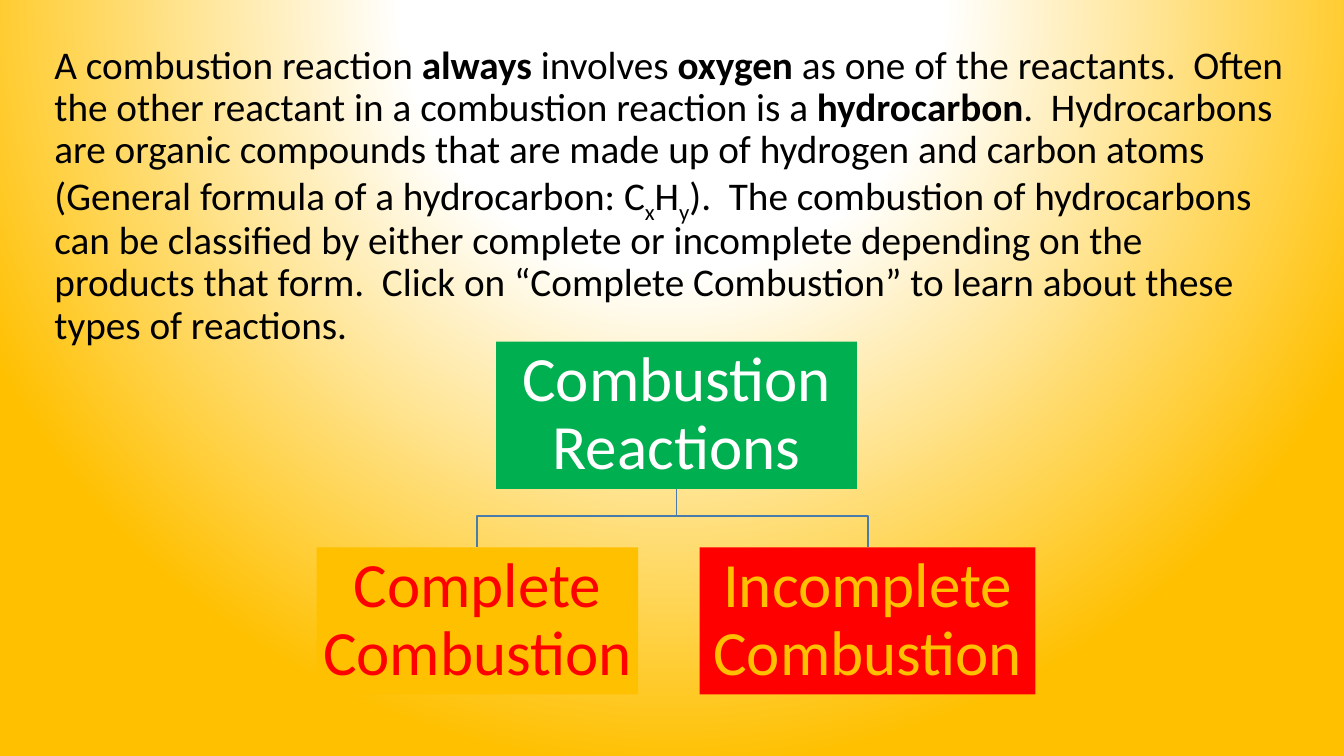
import pptx
import pptx.dml.color
import pptx.enum.shapes
import pptx.enum.text
import pptx.oxml
import pptx.util
from dataclasses import dataclass

Inches = pptx.util.Inches


@dataclass(frozen=True)
class Theme:
    font: str = "Calibri"
    body_size: int = 28
    box_size: int = 45
    black: str = "000000"
    white: str = "FFFFFF"
    green: str = "00B050"
    gold: str = "FFC000"
    red: str = "FF0000"
    line: str = "497CAB"


theme = Theme()


def rgb(value):
    return pptx.dml.color.RGBColor.from_string(value)


def add_run(p, text, size, color, bold=False, baseline=None):
    r = p.add_run()
    r.text = text
    r.font.name = theme.font
    r.font.size = pptx.util.Pt(size)
    r.font.bold = bold
    r.font.color.rgb = rgb(color)
    if baseline is not None:
        r.font._element.set("baseline", str(baseline * 1000))


prs = pptx.Presentation()
prs.slide_width = Inches(13.33)
prs.slide_height = Inches(7.5)
s = prs.slides.add_slide(prs.slide_layouts[1])
title = s.shapes.title.element
title.getparent().remove(title)

# Background: circular glow from the top centre
s.background.fill.solid()
solid = s.element.xpath("p:cSld/p:bg/p:bgPr/a:solidFill")[0]
stops = [(0, theme.white), (35, theme.white), (100, theme.gold)]
stop_xml = "".join(
    f'<a:gs pos="{pos * 1000}"><a:srgbClr val="{color}"/></a:gs>' for pos, color in stops
)
glow = pptx.oxml.parse_xml(
    '<a:gradFill xmlns:a="http://schemas.openxmlformats.org/drawingml/2006/main" rotWithShape="1">'
    f"<a:gsLst>{stop_xml}</a:gsLst>"
    '<a:path path="circle"><a:fillToRect l="50000" t="-80000" r="50000" b="180000"/></a:path>'
    "</a:gradFill>"
)
solid.getparent().replace(solid, glow)

# Explanation
body = s.placeholders[1]
body.left, body.top = Inches(0.44), Inches(0.4)
body.width, body.height = Inches(12.47), Inches(4.76)
tf = body.text_frame
tf.word_wrap = True
tf.auto_size = pptx.enum.text.MSO_AUTO_SIZE.NONE
p = tf.paragraphs[0]
p.line_spacing = 0.9
p.space_before = pptx.util.Pt(10)
pPr = p._p.get_or_add_pPr()
pPr.set("marL", "0")
pPr.set("indent", "0")
pPr.append(pptx.oxml.parse_xml(
    '<a:buNone xmlns:a="http://schemas.openxmlformats.org/drawingml/2006/main"/>'
))
explanation = [
    ("A combustion reaction ", {}),
    ("always", {"bold": True}),
    (" involves ", {}),
    ("oxygen", {"bold": True}),
    (" as one of the reactants.  Often the other reactant in a combustion reaction is a ", {}),
    ("hydrocarbon", {"bold": True}),
    (".  Hydrocarbons are organic compounds that are made up of hydrogen and carbon atoms "
     "(General formula of a hydrocarbon: C", {}),
    ("x", {"baseline": -25}),
    ("H", {}),
    ("y", {"baseline": -25}),
    (").  The combustion of hydrocarbons can be classified by either complete or incomplete "
     "depending on the products that form.  Click on “Complete Combustion” to learn about "
     "these types of reactions.", {}),
]
for text, style in explanation:
    add_run(p, text, theme.body_size, theme.black, **style)

# Branches from the parent box to each child box
parent_x, parent_bottom, bend_y, child_top = 6.71, 4.85, 5.12, 5.43
for child_x in (8.61, 4.73):
    branch = s.shapes.build_freeform(Inches(parent_x), Inches(parent_bottom))
    branch.add_line_segments(
        [(Inches(x), Inches(y))
         for x, y in ((parent_x, bend_y), (child_x, bend_y), (child_x, child_top))],
        close=False,
    )
    sp = branch.convert_to_shape()
    sp.shadow.inherit = False
    sp.fill.background()
    sp.line.color.rgb = rgb(theme.line)
    sp.line.width = pptx.util.Pt(1)

# Reaction boxes
box_height = 1.46
boxes = [
    ("Combustion Reactions", 4.92, parent_bottom - box_height, 3.58, theme.green, theme.white),
    ("Complete Combustion", 3.14, child_top, 3.19, theme.gold, theme.red),
    ("Incomplete Combustion", 6.94, child_top, 3.33, theme.red, theme.gold),
]
for text, left, top, width, fill, color in boxes:
    sp = s.shapes.add_shape(
        pptx.enum.shapes.MSO_SHAPE.RECTANGLE,
        Inches(left), Inches(top), Inches(width), Inches(box_height),
    )
    sp.shadow.inherit = False
    sp.fill.solid()
    sp.fill.fore_color.rgb = rgb(fill)
    sp.line.fill.background()
    tf = sp.text_frame
    tf.word_wrap = True
    tf.vertical_anchor = pptx.enum.text.MSO_ANCHOR.MIDDLE
    tf.margin_left = tf.margin_right = tf.margin_top = tf.margin_bottom = Inches(0.03)
    p = tf.paragraphs[0]
    p.alignment = pptx.enum.text.PP_ALIGN.CENTER
    p.line_spacing = 0.9
    add_run(p, text, theme.box_size, color)

prs.save("out.pptx")
